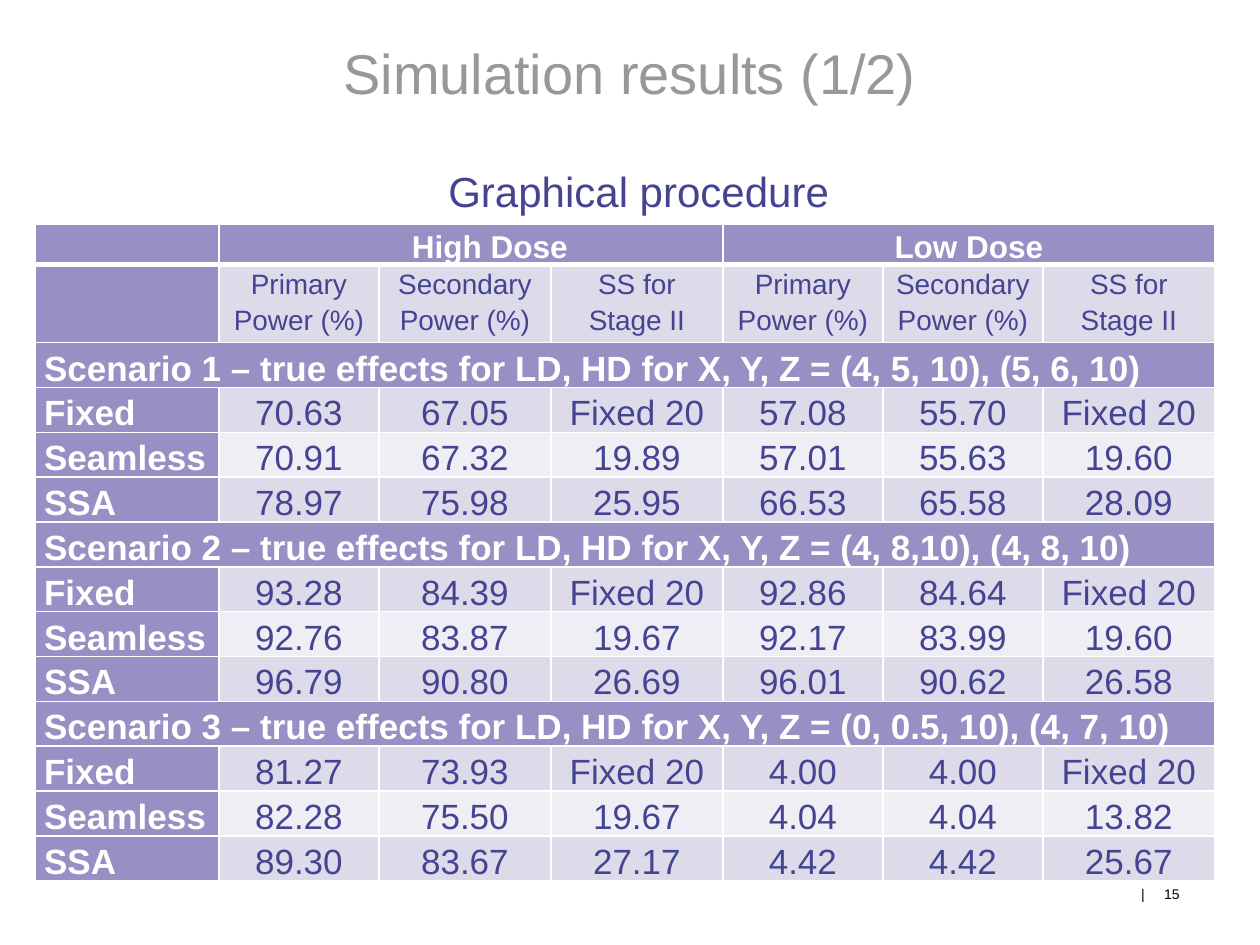
from dataclasses import dataclass

from lxml.etree import SubElement
from pptx import Presentation
from pptx.dml.color import RGBColor
from pptx.enum.text import MSO_ANCHOR as Anchor, PP_ALIGN as Align
from pptx.oxml.ns import qn
from pptx.util import Pt

WHITE, NAVY, GREY, BLACK = "FFFFFF", "444492", "989898", "000000"
HEAD, DARK, LIGHT = "9690C4", "DDDBEA", "EFEEF5"
WIDE, SLIM = 98.28, 91.44
COLS = [105.12, SLIM, WIDE, WIDE, SLIM, SLIM, WIDE]
LABELS = ["Primary Power (%)", "Secondary Power (%)", "SS for Stage II"]


@dataclass
class Label:
    text: str
    left: float
    top: float
    width: float
    height: float
    size: float
    color: str


@dataclass
class Case:
    title: str
    rows: list[list[str]]


TITLE = Label("Simulation results (1/2)", 8.64, 26.4, 702.72, 51.12, 32, GREY)
BODY = Label("Graphical procedure ", 25.2, 94.3, 686.16, 402.5, 24, NAVY)
PAGE = Label("|\t15", 636.48, 506.16, 38.16, 18.72, 8, BLACK)

CASES = [
    Case("Scenario 1 – true effects for LD, HD for X, Y, Z = (4, 5, 10), (5, 6, 10)", [
        ["Fixed", "70.63", "67.05", "Fixed 20", "57.08", "55.70", "Fixed 20"],
        ["Seamless", "70.91", "67.32", "19.89", "57.01", "55.63", "19.60"],
        ["SSA", "78.97", "75.98", "25.95", "66.53", "65.58", "28.09"],
    ]),
    Case("Scenario 2 – true effects for LD, HD for X, Y, Z = (4, 8,10), (4, 8, 10)", [
        ["Fixed", "93.28", "84.39", "Fixed 20", "92.86", "84.64", "Fixed 20"],
        ["Seamless", "92.76", "83.87", "19.67", "92.17", "83.99", "19.60"],
        ["SSA", "96.79", "90.80", "26.69", "96.01", "90.62", "26.58"],
    ]),
    Case("Scenario 3 – true effects for LD, HD for X, Y, Z = (0, 0.5, 10), (4, 7, 10)", [
        ["Fixed", "81.27", "73.93", "Fixed 20", "4.00", "4.00", "Fixed 20"],
        ["Seamless", "82.28", "75.50", "19.67", "4.04", "4.04", "13.82"],
        ["SSA", "89.30", "83.67", "27.17", "4.42", "4.42", "25.67"],
    ]),
]


def tint(code: str) -> RGBColor:
    return RGBColor.from_string(code)


def write(frame, text: str, *, size: float, color: str, bold=False,
          align=Align.CENTER, space=1.0, indent=0.0, tab=0.0) -> None:
    par = frame.paragraphs[0]
    par.alignment = align
    par.line_spacing = space
    props = par._p.get_or_add_pPr()
    if indent:
        props.set("marL", "0")
        props.set("indent", str(Pt(indent)))
    if tab:
        stops = SubElement(props, qn("a:tabLst"))
        SubElement(stops, qn("a:tab"), pos=str(Pt(tab)), algn="l")
    run = par.add_run()
    run.text = text
    run.font.name = "Arial"
    run.font.size = Pt(size)
    run.font.bold = bold
    run.font.color.rgb = tint(color)


def place(slide, label: Label, inset=0.0, **style) -> None:
    box = slide.shapes.add_textbox(Pt(label.left), Pt(label.top),
                                   Pt(label.width), Pt(label.height))
    frame = box.text_frame
    frame.word_wrap = True
    frame.vertical_anchor = Anchor.TOP
    frame.margin_left = Pt(inset)
    frame.margin_top = frame.margin_right = frame.margin_bottom = 0
    write(frame, label.text, size=label.size, color=label.color, **style)


def edge(cell, side: str, width: float) -> None:
    line = SubElement(cell._tc.get_or_add_tcPr(), qn(f"a:{side}"), w=str(Pt(width)))
    fill = SubElement(line, qn("a:solidFill"))
    SubElement(fill, qn("a:srgbClr"), val=WHITE)


def paint(cell, row: int, fill: str) -> None:
    cell.margin_left = cell.margin_right = Pt(5.2)
    cell.margin_top = Pt(0.5 if row > 1 else 0)
    cell.margin_bottom = Pt(-3)
    edge(cell, "lnL", 1)
    edge(cell, "lnR", 1)
    edge(cell, "lnT", 3 if row == 1 else 1)
    edge(cell, "lnB", 3 if row == 0 else 1)
    cell.fill.solid()
    cell.fill.fore_color.rgb = tint(fill)


def shade(row: int, col: int) -> str:
    if row == 0 or col == 0 or row % 4 == 2:
        return HEAD
    return LIGHT if row % 4 == 0 else DARK


def fill_in(cell, text: str, size: float, head=False, **style) -> None:
    write(cell.text_frame, text, size=size, bold=head,
          color=WHITE if head else NAVY, space=1.15, **style)


def draw_grid(slide) -> None:
    high = [22.8, 44.6] + [25.65] * (4 * len(CASES))
    grid = slide.shapes.add_table(len(high), len(COLS), Pt(20), Pt(128.4),
                                  Pt(sum(COLS)), Pt(sum(high))).table
    for col, width in zip(grid.columns, COLS):
        col.width = Pt(width)
    for row, height in enumerate(high):
        grid.rows[row].height = Pt(height)
        for col in range(len(COLS)):
            paint(grid.cell(row, col), row, shade(row, col))

    for col, text, indent in [(1, "High Dose", 21.6), (4, "Low Dose", 0)]:
        grid.cell(0, col).merge(grid.cell(0, col + 2))
        fill_in(grid.cell(0, col), text, 18, head=True, indent=indent)
    for col, text in enumerate(LABELS * 2, 1):
        fill_in(grid.cell(1, col), text, 16)

    for top, case in zip(range(2, len(high), 4), CASES):
        grid.cell(top, 0).merge(grid.cell(top, len(COLS) - 1))
        fill_in(grid.cell(top, 0), case.title, 20, head=True, align=Align.LEFT)
        for row, texts in enumerate(case.rows, top + 1):
            for col, text in enumerate(texts):
                fill_in(grid.cell(row, col), text, 20, head=col == 0,
                        align=Align.CENTER if col else Align.LEFT)


def main() -> None:
    deck = Presentation()
    deck.slide_width, deck.slide_height = Pt(720), Pt(540)
    slide = deck.slides.add_slide(deck.slide_layouts[6])
    place(slide, TITLE, space=0.9)
    place(slide, BODY)
    place(slide, PAGE, inset=15.6, align=Align.LEFT, tab=13.2)
    draw_grid(slide)
    deck.save("out.pptx")


if __name__ == "__main__":
    main()
